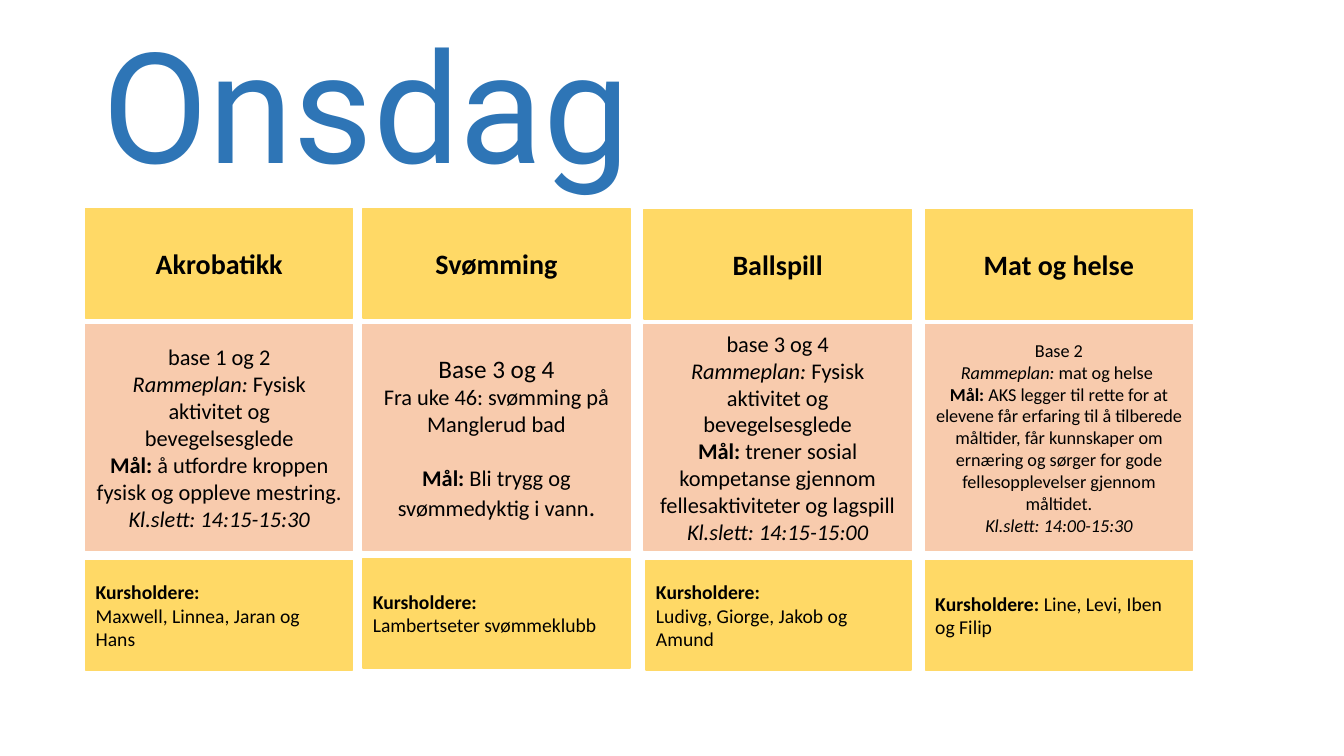
from dataclasses import dataclass

from pptx import Presentation
from pptx.dml.color import RGBColor
from pptx.enum import shapes, text
from pptx.util import Pt

YELLOW, PEACH, BLACK, BLUE = "FFD966", "F8CBAD", "000000", "2E75B6"
CARD_WIDTH = 190.8
HEADER_HEIGHT, PLAN_TOP, PLAN_HEIGHT, LEADERS_HEIGHT = 78.2, 231.84, 161.28, 78.2


@dataclass
class Phrase:
    wording: str
    bold: bool = False
    italic: bool = False
    size: float | None = None


@dataclass
class Line:
    phrases: list[Phrase]
    size: float
    space_before: float = 0


@dataclass
class Course:
    name: str
    left: float
    header_top: float
    leaders_top: float
    plan: list[Line]
    leaders: list[Line]
    leaders_inset: float = 0


def framework_plan(base: str, area: str, goal: str, hours: str, size: float) -> list[Line]:
    return [
        Line([Phrase(base)], size),
        Line([Phrase("Rammeplan:", italic=True), Phrase(f" {area}")], size),
        Line([Phrase("Mål: ", bold=True), Phrase(goal)], size),
        Line([Phrase(f"Kl.slett: {hours}", italic=True)], size),
    ]


def course_leaders(names: str) -> list[Line]:
    return [Line([Phrase("Kursholdere:", bold=True)], 14), Line([Phrase(names)], 14)]


COURSES = [
    Course(
        "Akrobatikk", 61.2, 149.04, 400.32,
        framework_plan("base 1 og 2", "Fysisk aktivitet og bevegelsesglede",
                       "å utfordre kroppen fysisk og oppleve mestring.", "14:15-15:30", 16),
        course_leaders("Maxwell, Linnea, Jaran og Hans"),
    ),
    Course(
        "Svømming", 259.2, 149.04, 398.88,
        [
            Line([Phrase("Base 3 og 4")], 18),
            Line([Phrase("Fra uke 46: svømming på Manglerud bad")], 16),
            Line([Phrase("Mål: ", bold=True), Phrase("Bli trygg og svømmedyktig i vann"),
                  Phrase(".", size=18)], 16, space_before=19.5),
        ],
        course_leaders("Lambertseter svømmeklubb"),
    ),
    Course(
        "Ballspill", 460.08, 149.76, 400.32,
        framework_plan("base 3 og 4", "Fysisk aktivitet og bevegelsesglede",
                       "trener sosial kompetanse gjennom fellesaktiviteter og lagspill",
                       "14:15-15:00", 16),
        course_leaders("Ludivg, Giorge, Jakob og Amund"),
        leaders_inset=1.44,
    ),
    Course(
        "Mat og helse", 660.96, 149.76, 400.32,
        framework_plan("Base 2", "mat og helse ",
                       "AKS legger til rette for at elevene får erfaring til å tilberede "
                       "måltider, får kunnskaper om ernæring og sørger for gode "
                       "fellesopplevelser gjennom måltidet.", "14:00-15:30", 13),
        [Line([Phrase("Kursholdere: ", bold=True), Phrase("Line, Levi, Iben og Filip")], 14)],
    ),
]


def set_color(color_format, hex_color: str) -> None:
    color_format.rgb = RGBColor.from_string(hex_color)


def add_card(slide, left: float, top: float, width: float, height: float,
             color: str, lines: list[Line], align) -> None:
    card = slide.shapes.add_shape(shapes.MSO_SHAPE.RECTANGLE,
                                  Pt(left), Pt(top), Pt(width), Pt(height))
    card.shadow.inherit = False
    card.fill.solid()
    set_color(card.fill.fore_color, color)
    set_color(card.line.color, color)
    card.line.width = Pt(1)

    frame = card.text_frame
    frame.word_wrap = True
    frame.vertical_anchor = text.MSO_ANCHOR.MIDDLE
    for index, line in enumerate(lines):
        paragraph = frame.add_paragraph() if index else frame.paragraphs[0]
        paragraph.alignment = align
        paragraph.space_before = Pt(line.space_before)
        paragraph.font.name = "Calibri"
        paragraph.font.size = Pt(line.size)
        set_color(paragraph.font.color, BLACK)
        for phrase in line.phrases:
            run = paragraph.add_run()
            run.text = phrase.wording
            run.font.bold = phrase.bold
            run.font.italic = phrase.italic
            if phrase.size:
                run.font.size = Pt(phrase.size)


def add_course(slide, course: Course) -> None:
    center, left = text.PP_ALIGN.CENTER, text.PP_ALIGN.LEFT
    add_card(slide, course.left, course.header_top, CARD_WIDTH, HEADER_HEIGHT,
             YELLOW, [Line([Phrase(course.name, bold=True)], 20)], center)
    add_card(slide, course.left, PLAN_TOP, CARD_WIDTH, PLAN_HEIGHT,
             PEACH, course.plan, center)
    add_card(slide, course.left + course.leaders_inset, course.leaders_top,
             CARD_WIDTH - course.leaders_inset, LEADERS_HEIGHT,
             YELLOW, course.leaders, left)


def add_day(slide, name: str) -> None:
    day = slide.shapes.title
    day.left, day.top, day.width, day.height = Pt(66.24), Pt(28.8), Pt(828), Pt(104.4)
    frame = day.text_frame
    frame.text = name
    frame.word_wrap = True
    frame.auto_size = text.MSO_AUTO_SIZE.NONE
    frame.vertical_anchor = text.MSO_ANCHOR.MIDDLE
    paragraph = frame.paragraphs[0]
    paragraph.alignment = text.PP_ALIGN.LEFT
    paragraph.line_spacing = 0.9
    paragraph.font.name = "Roboto"
    paragraph.font.size = Pt(110)
    set_color(paragraph.font.color, BLUE)


def main() -> None:
    presentation = Presentation()
    presentation.slide_width, presentation.slide_height = Pt(960), Pt(540)
    slide = presentation.slides.add_slide(presentation.slide_layouts[5])

    # Day of the week
    add_day(slide, "Onsdag")

    # One column of cards per course
    for course in COURSES:
        add_course(slide, course)

    presentation.save("out.pptx")


if __name__ == "__main__":
    main()
